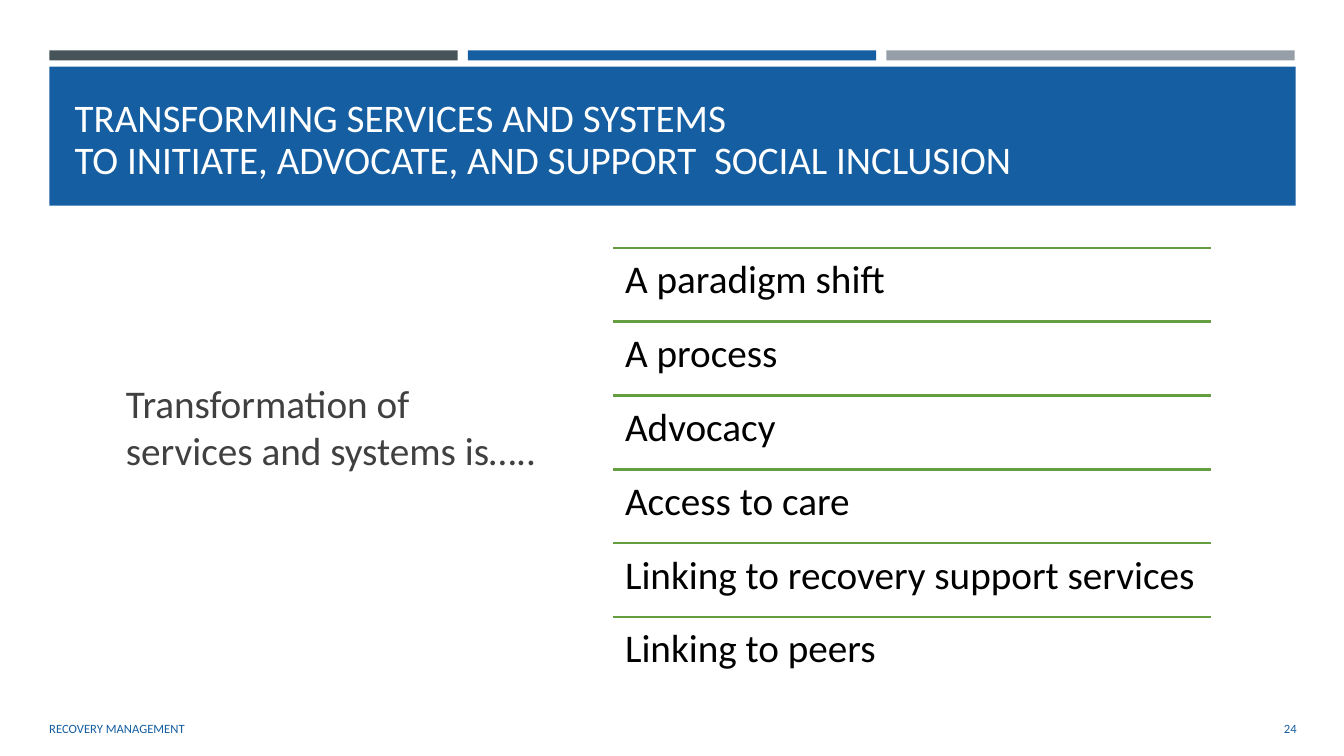
import pptx
import pptx.util
import pptx.dml.color
import pptx.enum.shapes
import pptx.enum.text
import pptx.oxml.ns
import lxml.etree

Inches = pptx.util.Inches
Pt = pptx.util.Pt
Color = pptx.dml.color.RGBColor
Align = pptx.enum.text.PP_ALIGN
Anchor = pptx.enum.text.MSO_ANCHOR

BLUE = Color(0x15, 0x5E, 0xA1)
SLATE = Color(0x46, 0x53, 0x59)
GREY = Color(0x96, 0x9F, 0xA7)
GREEN = Color(0x64, 0x9E, 0x40)
DARK = Color(0x40, 0x40, 0x40)
BLACK = Color(0, 0, 0)
WHITE = Color(255, 255, 255)

deck = pptx.Presentation()
deck.slide_width = Inches(13.33)
deck.slide_height = Inches(7.5)
slide = deck.slides.add_slide(deck.slide_layouts[5])
shapes = slide.shapes


def add_bar(left, top, width, height, color):
    bar = shapes.add_shape(
        pptx.enum.shapes.MSO_SHAPE.RECTANGLE,
        Inches(left), Inches(top), Inches(width), Inches(height))
    bar.shadow.inherit = False
    bar.fill.solid()
    bar.fill.fore_color.rgb = color
    bar.line.fill.background()


def write(shape, lines, size, color, anchor, align=Align.LEFT):
    frame = shape.text_frame
    frame.word_wrap = True
    frame.auto_size = pptx.enum.text.MSO_AUTO_SIZE.NONE
    frame.vertical_anchor = anchor
    para = frame.paragraphs[0]
    para.alignment = align
    for count, line in enumerate(lines):
        if count:
            para.add_line_break()
        run = para.add_run()
        run.text = line
        run.font.name = "Calibri"
        run.font.size = Pt(size)
        run.font.color.rgb = color
    return frame


edge = 0.49
pitch = 4.15
for col, color in enumerate([SLATE, BLUE, GREY]):
    add_bar(edge + col * pitch, 0.5, 4.05, 0.1, color)
add_bar(edge, 0.66, 12.36, 1.38, BLUE)

title = shapes.title
title.left, title.top = Inches(0.64), Inches(0.86)
title.width, title.height = Inches(12.06), Inches(1.08)
head = write(title, [
    "TRANSFORMING SERVICES AND SYSTEMS",
    "TO INITIATE, ADVOCATE, AND SUPPORT  SOCIAL INCLUSION",
], 27.9, WHITE, Anchor.MIDDLE)
head.paragraphs[0].line_spacing = 0.9
title.element.getparent().append(title.element)

foot = shapes.add_textbox(Inches(0.39), Inches(7.03), Inches(7.46), Inches(0.4))
write(foot, ["RECOVERY MANAGEMENT"], 9, BLUE, Anchor.MIDDLE)
page = shapes.add_textbox(Inches(11.81), Inches(7.03), Inches(1.15), Inches(0.4))
write(page, ["24"], 9, BLUE, Anchor.MIDDLE, Align.RIGHT)

lead = shapes.add_textbox(Inches(1.15), Inches(2.44), Inches(4.31), Inches(4.4))
frame = write(lead, ["Transformation of services and systems is….."],
              28, DARK, Anchor.TOP)
frame.margin_top = Inches(1.32)

left, top, width, step = 6.08, 2.46, 5.93, 0.732
items = ["A paradigm shift", "A process", "Advocacy", "Access to care",
         "Linking to recovery support services", "Linking to peers"]
for row, item in enumerate(items):
    level = Inches(top + row * step)
    rule = shapes.add_connector(
        pptx.enum.shapes.MSO_CONNECTOR.STRAIGHT,
        Inches(left), level, Inches(left + width), level)
    rule.line.color.rgb = GREEN
    rule.line.width = Pt(1.75)
    lxml.etree.SubElement(rule.element.spPr, pptx.oxml.ns.qn("a:effectLst"))
    box = shapes.add_textbox(Inches(left), level, Inches(width), Inches(step))
    frame = write(box, [item], 28, BLACK, Anchor.TOP)
    frame.margin_left = frame.margin_right = Inches(0.12)
    frame.margin_top = frame.margin_bottom = Inches(0.12)
    frame.paragraphs[0].line_spacing = 0.9

deck.save("out.pptx")
